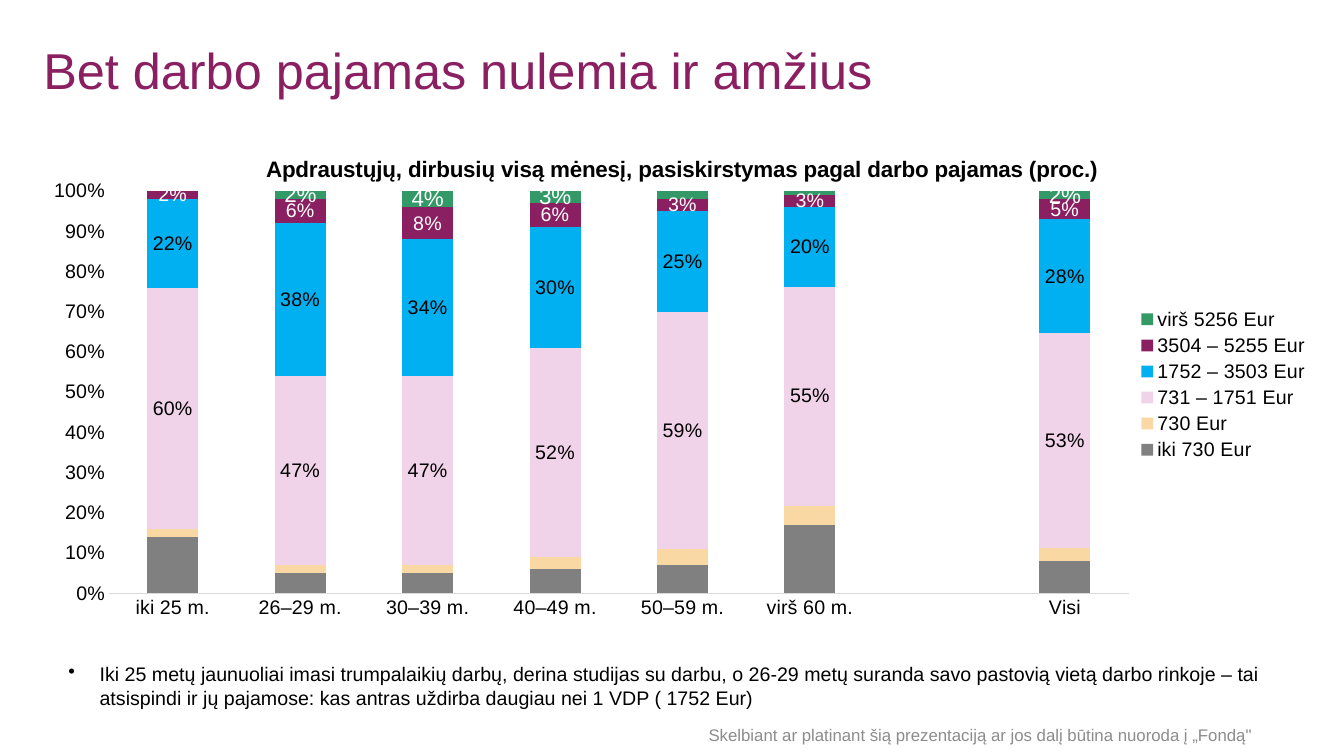
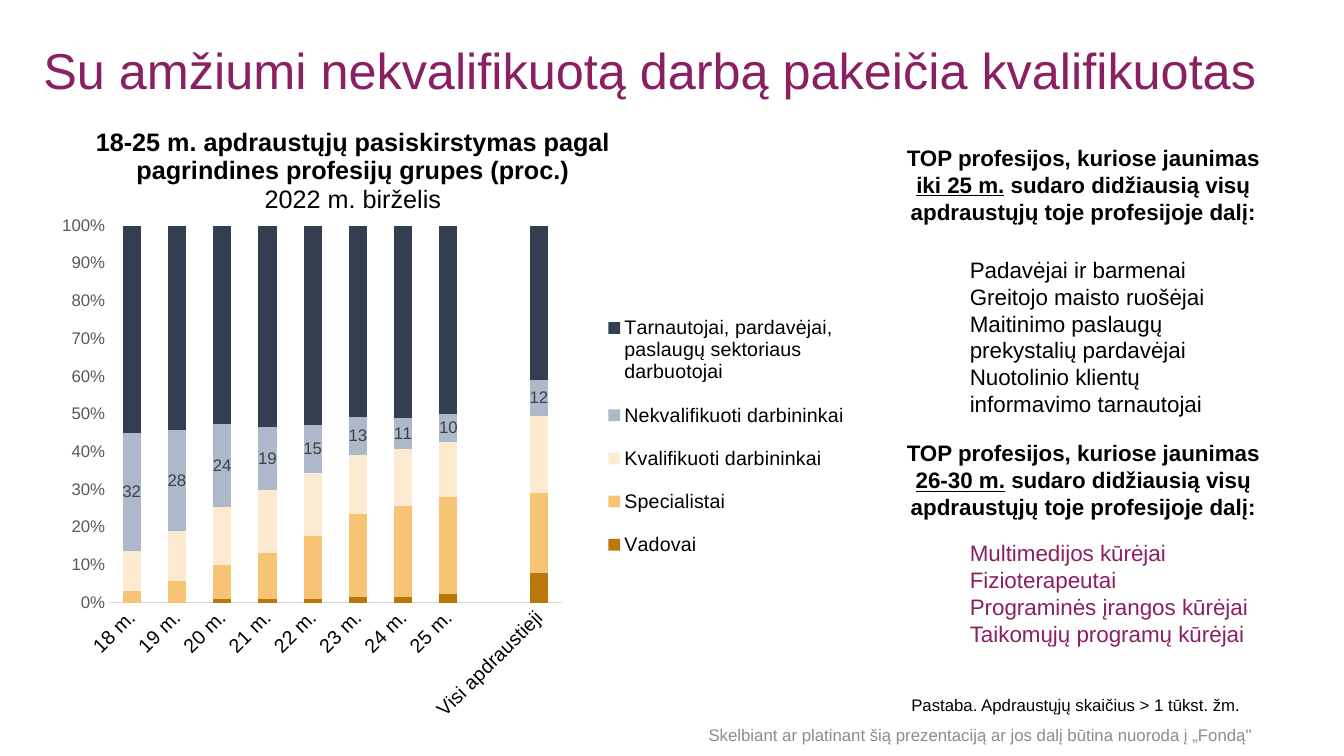
import pptx
import pptx.util
import pptx.chart.data
import pptx.dml.color
import pptx.enum.chart
import pptx.enum.text
import pptx.oxml
import pptx.oxml.ns
from pptx.util import Inches

PURPLE = "8A2062"
BLACK = "000000"
WHITE = "FFFFFF"
GREY = "8C8C8C"
AXIS_LINE = "D9D9D9"
FOOTER = "Skelbiant ar platinant šią prezentaciją ar jos dalį būtina nuoroda į „Fondą\""
CENTER = pptx.enum.text.PP_ALIGN.CENTER
LEFT = pptx.enum.text.PP_ALIGN.LEFT
MIDDLE = pptx.enum.text.MSO_ANCHOR.MIDDLE
TOP = pptx.enum.text.MSO_ANCHOR.TOP
qn = pptx.oxml.ns.qn


def rgb(value):
    return pptx.dml.color.RGBColor.from_string(value)


def chart_xml(body):
    namespace = pptx.oxml.ns.nsdecls("c")
    return pptx.oxml.parse_xml(body.replace(">", f" {namespace}>", 1))


def manual_layout(x, y, width=None, height=None, inner=False):
    target = '<c:layoutTarget val="inner"/>' if inner else ""
    size = f'<c:w val="{width}"/><c:h val="{height}"/>' if width else ""
    return chart_xml(
        f'<c:layout><c:manualLayout>{target}<c:xMode val="edge"/><c:yMode val="edge"/>'
        f'<c:x val="{x}"/><c:y val="{y}"/>{size}</c:manualLayout></c:layout>')


def place(element, layout, after=None):
    for old in element.findall(qn("c:layout")):
        element.remove(old)
    if after is None:
        element.insert(0, layout)
    else:
        element.find(qn(after)).addnext(layout)


class Deck:
    font_name = "Arial"

    def __init__(self):
        self.presentation = pptx.Presentation()
        self.presentation.slide_width = Inches(13.33)
        self.presentation.slide_height = Inches(7.5)
        self.slide = None

    def style(self, font, size, color=BLACK, bold=False):
        font.name = self.font_name
        font.size = pptx.util.Pt(size)
        font.bold = bold
        font.color.rgb = rgb(color)

    def start(self, heading):
        self.slide = self.presentation.slides.add_slide(self.presentation.slide_layouts[5])
        title = self.slide.shapes.title
        title.left, title.top = Inches(0.33), Inches(0.28)
        title.width, title.height = Inches(12.87), Inches(0.89)
        title.text_frame.text = heading
        title.text_frame.auto_size = pptx.enum.text.MSO_AUTO_SIZE.NONE
        title.text_frame.vertical_anchor = MIDDLE
        paragraph = title.text_frame.paragraphs[0]
        paragraph.alignment = LEFT
        paragraph.line_spacing = 0.9
        self.style(paragraph.font, 36, PURPLE)
        self.text([FOOTER], 6.85, 7.09, 5.75, 0.4, 12, GREY, align=CENTER, anchor=MIDDLE)

    def text(self, lines, left, top, width, height, size, color=BLACK,
             bold=False, align=LEFT, anchor=TOP):
        box = self.slide.shapes.add_textbox(
            Inches(left), Inches(top), Inches(width), Inches(height))
        frame = box.text_frame
        frame.word_wrap = True
        frame.vertical_anchor = anchor
        for index, line in enumerate(lines):
            paragraph = frame.add_paragraph() if index else frame.paragraphs[0]
            paragraph.text = line
            paragraph.alignment = align
            self.style(paragraph.font, size, color, bold)
        return frame

    def bullet(self, line, left, top, width, height, size):
        frame = self.text([line], left, top, width, height, size)
        properties = frame.paragraphs[0]._p.get_or_add_pPr()
        properties.set("marL", str(Inches(0.31)))
        properties.set("indent", str(-Inches(0.31)))
        mark = pptx.oxml.parse_xml(f'<a:buChar {pptx.oxml.ns.nsdecls("a")} char="•"/>')
        properties.find(qn("a:defRPr")).addprevious(mark)

    def top_heading(self, age, top):
        frame = self.text(["TOP profesijos, kuriose jaunimas", ""],
                          8.68, top, 4.13, 0.91, 16, bold=True, align=CENTER)
        second = frame.paragraphs[1]
        for words, underlined in ((age, True),
                                  (" sudaro didžiausią visų apdraustųjų toje profesijoje dalį:", False)):
            run = second.add_run()
            run.text = words
            run.font.underline = underlined

    def stacked_chart(self, categories, series, left, top, width, height, plot_area,
                      number_format="General"):
        data = pptx.chart.data.CategoryChartData(number_format=number_format)
        data.categories = categories
        for name, color, values in series:
            data.add_series(name, values)
        chart = self.slide.shapes.add_chart(
            pptx.enum.chart.XL_CHART_TYPE.COLUMN_STACKED_100,
            Inches(left), Inches(top), Inches(width), Inches(height), data).chart
        self.style(chart.font, 10)
        plot = chart.plots[0]
        plot.gap_width, plot.overlap, plot.vary_by_categories = 150, 100, False
        for bars, (name, color, values) in zip(plot.series, series):
            bars.format.fill.solid()
            bars.format.fill.fore_color.rgb = rgb(color)
        place(chart._chartSpace.chart.plotArea, manual_layout(*plot_area, inner=True))
        chart.has_legend = True
        chart.legend.position = pptx.enum.chart.XL_LEGEND_POSITION.RIGHT
        chart.legend.include_in_layout = False
        self.style(chart.legend.font, 14)
        return chart

    def chart_title(self, chart, lines, size, x, y):
        frame = chart.chart_title.text_frame
        for index, (line, bold) in enumerate(lines):
            paragraph = frame.add_paragraph() if index else frame.paragraphs[0]
            paragraph.text = line
            self.style(paragraph.font, size, bold=bold)
        place(chart.chart_title._element, manual_layout(x, y), "c:tx")

    def axes(self, chart, value_size, value_color=BLACK, rotation=0):
        for axis, size, color in ((chart.category_axis, 14, BLACK),
                                  (chart.value_axis, value_size, value_color)):
            axis.major_tick_mark = pptx.enum.chart.XL_TICK_MARK.NONE
            axis.has_major_gridlines = False
            self.style(axis.tick_labels.font, size, color)
        chart.value_axis.format.line.fill.background()
        chart.value_axis.tick_labels.number_format = "0%"
        chart.value_axis.tick_labels.number_format_is_linked = False
        line = chart.category_axis.format.line
        line.color.rgb = rgb(AXIS_LINE)
        line.width = pptx.util.Pt(0.75)
        if rotation:
            body = chart.category_axis._element.find(qn("c:txPr")).find(qn("a:bodyPr"))
            body.set("rot", str(rotation * 60000))

    def labels(self, bars, number_format, size, color, hidden=()):
        labels = bars.data_labels
        labels.show_value = True
        labels.number_format = number_format
        labels.number_format_is_linked = False
        self.style(labels.font, size, color)
        for position, index in enumerate(hidden):
            labels._element.insert(position, chart_xml(
                f'<c:dLbl><c:idx val="{index}"/><c:delete val="1"/></c:dLbl>'))


def income_by_age(deck):
    deck.start("Bet darbo pajamas nulemia ir amžius")
    ages = ["iki 25 m.", "26–29 m.", "30–39 m.", "40–49 m.", "50–59 m.", "virš 60 m.", "", "Visi"]
    incomes = [
        ("iki 730 Eur", "808080", [0.14, 0.05, 0.05, 0.06, 0.07, 0.17, None, 0.08]),
        ("730 Eur", "F9D8A3", [0.02, 0.02, 0.02, 0.03, 0.04, 0.05, None, 0.03]),
        ("731 – 1751 Eur", "F1D3E9", [0.6, 0.47, 0.47, 0.52, 0.59, 0.55, None, 0.53]),
        ("1752 – 3503 Eur", "00B0F0", [0.22, 0.38, 0.34, 0.3, 0.25, 0.2, None, 0.28]),
        ("3504 – 5255 Eur", PURPLE, [0.02, 0.06, 0.08, 0.06, 0.03, 0.03, None, 0.05]),
        ("virš 5256 Eur", "339966", [0, 0.02, 0.04, 0.03, 0.02, 0.01, None, 0.02]),
    ]
    chart = deck.stacked_chart(ages, incomes, 0.45, 1.29, 12.64, 5.05,
                               (0.05, 0.12, 0.8, 0.79), "0%")
    deck.chart_title(chart, [(
        "Apdraustųjų, dirbusių visą mėnesį, pasiskirstymas pagal darbo pajamas (proc.)", True)],
        16, 0.17, 0.04)
    deck.axes(chart, 14)
    label_styles = [(14, BLACK, ()), (14, BLACK, ()), (14, WHITE, ()), (16, WHITE, (0, 4, 5))]
    for bars, label_style in zip(list(chart.plots[0].series)[2:], label_styles):
        deck.labels(bars, "0%", *label_style)
    deck.bullet(
        "Iki 25 metų jaunuoliai imasi trumpalaikių darbų, derina studijas su darbu, "
        "o 26-29 metų suranda savo pastovią vietą darbo rinkoje – tai atsispindi ir jų "
        "pajamose: kas antras uždirba daugiau nei 1 VDP ( 1752 Eur)",
        0.58, 6.52, 12.63, 0.57, 14)


def occupations_by_age(deck):
    deck.start("Su amžiumi nekvalifikuotą darbą pakeičia kvalifikuotas")
    ages = [f"{age} m." for age in range(18, 26)] + ["", "Visi apdraustieji"]
    occupations = [
        ("Vadovai", "BC770B", [0, 0, 1, 1, 1, 2, 2, 3, None, 10]),
        ("Specialistai", "F7C475", [3, 6, 10, 14, 20, 28, 32, 35, None, 27]),
        ("Kvalifikuoti darbininkai", "FCEBD1", [11, 14, 17, 19, 20, 20, 20, 20, None, 26]),
        ("Nekvalifikuoti darbininkai", "ADB9CA", [32, 28, 24, 19, 15, 13, 11, 10, None, 12]),
        ("Tarnautojai, pardavėjai, paslaugų sektoriaus darbuotojai", "333F50",
         [56, 57, 58, 61, 63, 65, 68, 68, None, 52]),
    ]
    chart = deck.stacked_chart(ages, occupations, 0.43, 1.16, 8.16, 6.34,
                               (0.08, 0.17, 0.55, 0.59))
    deck.chart_title(chart, [("18-25 m. apdraustųjų pasiskirstymas pagal", True),
                             ("pagrindines profesijų grupes (proc.)", True),
                             ("2022 m. birželis", False)], 18, 0.06, 0.01)
    deck.axes(chart, 12, "595959", rotation=-45)
    deck.labels(chart.plots[0].series[3], "#,##0", 12, "404040")
    place(chart.legend._element, manual_layout(0.67, 0.28, 0.32, 0.44), "c:legendPos")

    deck.top_heading("iki 25 m.", 1.38)
    deck.text(["Padavėjai ir barmenai", "Greitojo maisto ruošėjai",
               "Maitinimo paslaugų prekystalių pardavėjai",
               "Nuotolinio klientų informavimo tarnautojai"], 9.52, 2.49, 2.98, 1.72, 16)
    deck.top_heading("26-30 m.", 4.31)
    deck.text(["Multimedijos kūrėjai", "Fizioterapeutai", "Programinės įrangos kūrėjai",
               "Taikomųjų programų kūrėjai"], 9.52, 5.3, 2.98, 1.18, 16, PURPLE)
    deck.text(["Pastaba. Apdraustųjų skaičius > 1 tūkst. žm."], 8.94, 6.84, 3.56, 0.3, 12)


def main():
    deck = Deck()
    income_by_age(deck)
    occupations_by_age(deck)
    deck.presentation.save("out.pptx")


if __name__ == "__main__":
    main()
